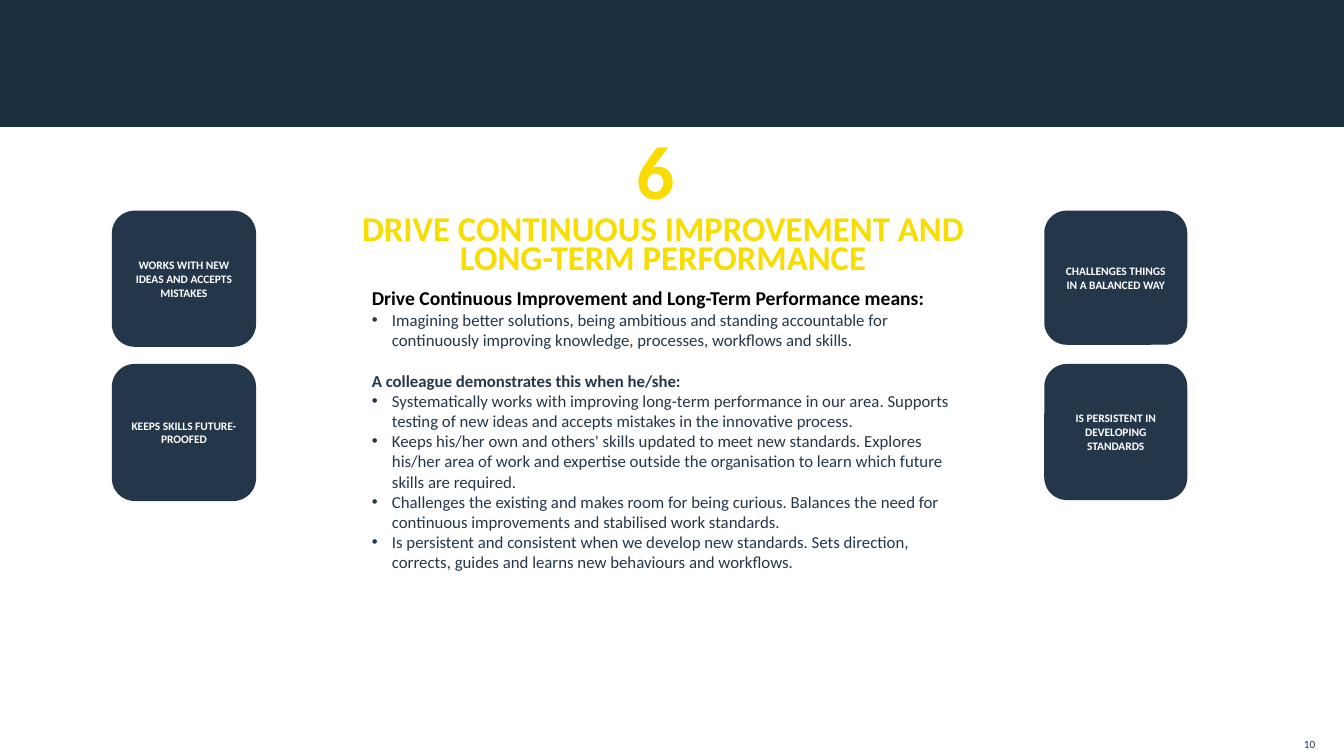
from dataclasses import dataclass

from lxml.etree import SubElement
from pptx import Presentation
from pptx.dml.color import RGBColor
from pptx.enum.shapes import MSO_SHAPE
from pptx.enum.text import MSO_ANCHOR, MSO_AUTO_SIZE, PP_ALIGN
from pptx.oxml.ns import qn
from pptx.util import Pt


# Colours and type sizes
@dataclass(frozen=True)
class Theme:
    font: str = "Calibri"
    band: str = "1A2F3D"
    navy: str = "24374A"
    yellow: str = "F9DC00"
    black: str = "000000"
    white: str = "FFFFFF"
    number: float = 54
    title: float = 24.8
    lead: float = 14
    body: float = 12
    card: float = 8.2
    page: float = 8


@dataclass(frozen=True)
class Box:
    left: float
    top: float
    width: float
    height: float

    def lengths(self) -> tuple:
        return tuple(Pt(v) for v in (self.left, self.top, self.width, self.height))


@dataclass(frozen=True)
class Card:
    text: str
    box: Box


@dataclass(frozen=True)
class Line:
    text: str
    size: float
    color: str
    bold: bool = False
    bullet: bool = False
    before: float = 0


THEME = Theme()
INDENT = 14.4
LEFT, RIGHT = 79.9, 745.9
ROW_1, ROW_2 = 150.5, 260

CARDS = [
    Card("WORKS WITH NEW IDEAS AND ACCEPTS MISTAKES", Box(LEFT, ROW_1, 103, 97.2)),
    Card("KEEPS SKILLS FUTURE-PROOFED", Box(LEFT, ROW_2, 103, 97.9)),
    Card("CHALLENGES THINGS IN A BALANCED WAY", Box(RIGHT, ROW_1, 102.2, 95.8)),
    Card("IS PERSISTENT IN DEVELOPING STANDARDS", Box(RIGHT, ROW_2, 102.2, 97.2)),
]


def bullet(text: str) -> Line:
    return Line(text, THEME.body, THEME.navy, bullet=True)


BODY = [
    Line("Drive Continuous Improvement and Long-Term Performance means:",
         THEME.lead, THEME.black, bold=True),
    bullet("Imagining better solutions, being ambitious and standing accountable for "
           "continuously improving knowledge, processes, workflows and skills."),
    Line("A colleague demonstrates this when he/she:",
         THEME.body, THEME.navy, bold=True, before=14.6),
    bullet("Systematically works with improving long-term performance in our area. "
           "Supports testing of new ideas and accepts mistakes in the innovative process."),
    bullet("Keeps his/her own and others' skills updated to meet new standards. Explores "
           "his/her area of work and expertise outside the organisation to learn which "
           "future skills are required."),
    bullet("Challenges the existing and makes room for being curious. Balances the need "
           "for continuous improvements and stabilised work standards."),
    bullet("Is persistent and consistent when we develop new standards. Sets direction, "
           "corrects, guides and learns new behaviours and workflows."),
]


def apply(target, values: dict) -> None:
    for name, value in values.items():
        setattr(target, name, value)


def write(p, line: Line, **paragraph) -> None:
    if line.bullet:
        pPr = p._p.get_or_add_pPr()
        pPr.set("marL", str(Pt(INDENT)))
        pPr.set("indent", str(-Pt(INDENT)))
        SubElement(pPr, qn("a:buFont")).set("typeface", "Arial")
        SubElement(pPr, qn("a:buChar")).set("char", "•")
    if line.before:
        p.space_before = Pt(line.before)
    apply(p, paragraph)
    r = p.add_run()
    r.text = line.text
    apply(r.font, {"name": THEME.font, "size": Pt(line.size), "bold": line.bold})
    r.font.color.rgb = RGBColor.from_string(line.color)


def add_text(s, box: Box, lines: list[Line], frame: dict | None = None, **paragraph):
    tf = s.shapes.add_textbox(*box.lengths()).text_frame
    apply(tf, {"word_wrap": True, **(frame or {})})
    for i, line in enumerate(lines):
        write(tf.add_paragraph() if i else tf.paragraphs[0], line, **paragraph)


def add_block(s, kind: MSO_SHAPE, box: Box, color: str):
    sp = s.shapes.add_shape(kind, *box.lengths())
    sp.shadow.inherit = False
    sp.fill.solid()
    sp.fill.fore_color.rgb = RGBColor.from_string(color)
    sp.line.fill.background()
    return sp


def add_card(s, card: Card) -> None:
    tf = add_block(s, MSO_SHAPE.ROUNDED_RECTANGLE, card.box, THEME.navy).text_frame
    apply(tf, {"word_wrap": True, "vertical_anchor": MSO_ANCHOR.MIDDLE})
    write(tf.paragraphs[0], Line(card.text, THEME.card, THEME.white, bold=True),
          alignment=PP_ALIGN.CENTER)


def set_title(s, box: Box, line: Line) -> None:
    sp = s.shapes.title
    apply(sp, dict(zip(("left", "top", "width", "height"), box.lengths())))
    tf = sp.text_frame
    apply(tf, {"word_wrap": True, "auto_size": MSO_AUTO_SIZE.NONE,
               "vertical_anchor": MSO_ANCHOR.MIDDLE})
    write(tf.paragraphs[0], line, alignment=PP_ALIGN.CENTER,
          line_spacing=0.7, space_before=Pt(0))


def main() -> None:
    prs = Presentation()
    prs.slide_width, prs.slide_height = Pt(960), Pt(540)
    s = prs.slides.add_slide(prs.slide_layouts[5])

    # Top band
    add_block(s, MSO_SHAPE.RECTANGLE, Box(0, 0, 960, 90.7), THEME.band)

    # Number and title
    add_text(s, Box(447.8, 85, 77, 72.7),
             [Line("6", THEME.number, THEME.yellow, bold=True)])
    set_title(s, Box(220.3, 150.5, 506.9, 52.6),
              Line("DRIVE CONTINUOUS IMPROVEMENT AND LONG-TERM PERFORMANCE",
                   THEME.title, THEME.yellow, bold=True))

    # Explanation
    add_text(s, Box(258.5, 200.9, 431.3, 330), BODY)

    # Behaviour cards
    for card in CARDS:
        add_card(s, card)

    # Page number
    margins = {f"margin_{side}": 0 for side in ("left", "top", "right", "bottom")}
    add_text(s, Box(848.9, 524.9, 90.7, 11.5), [Line("10", THEME.page, THEME.navy)],
             {"vertical_anchor": MSO_ANCHOR.BOTTOM, **margins},
             alignment=PP_ALIGN.RIGHT)

    prs.save("out.pptx")


if __name__ == "__main__":
    main()
